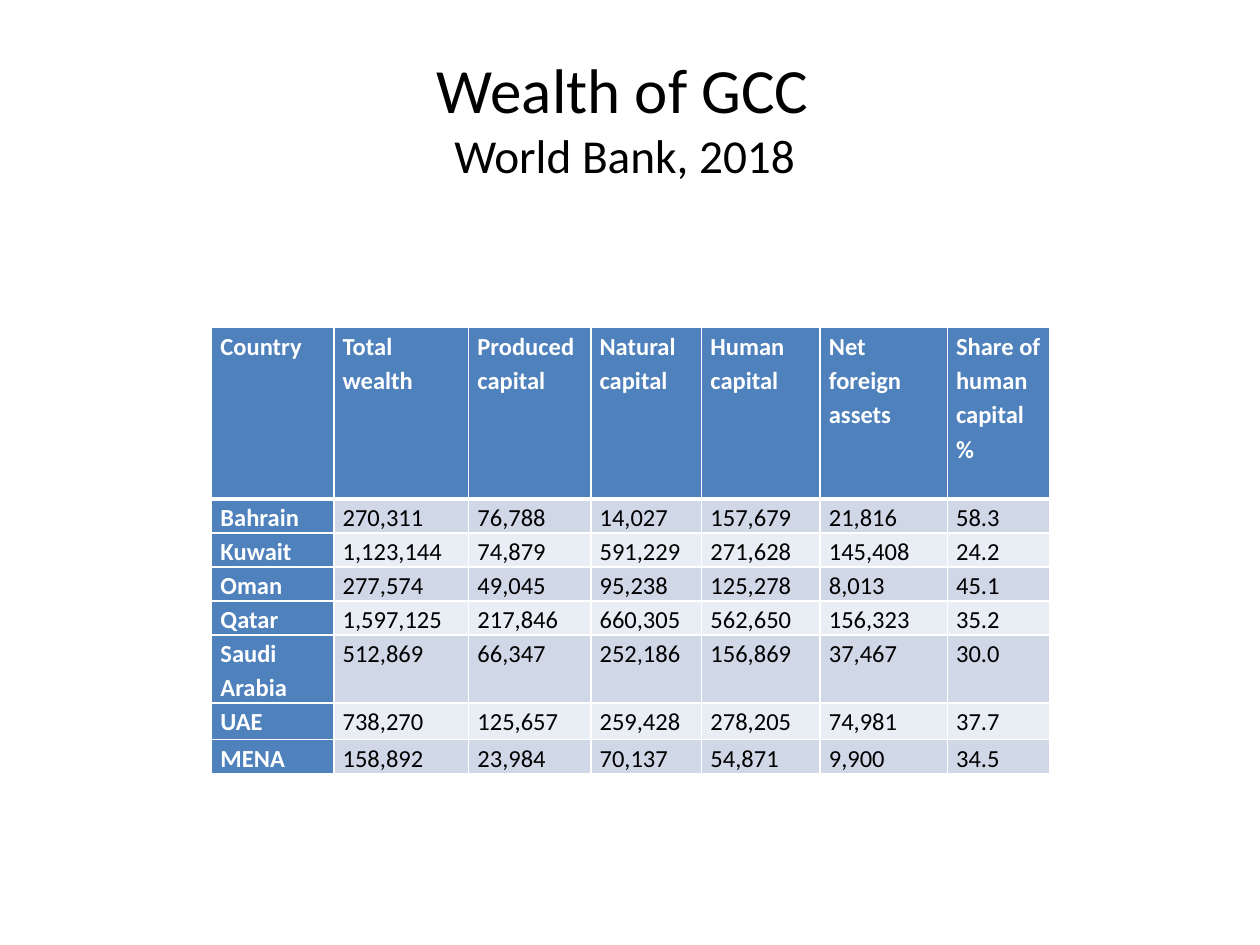
import pptx
import pptx.dml.color
import pptx.enum.text
import pptx.oxml.ns
import pptx.util
from lxml import etree
from pptx.util import Inches

RGBColor = pptx.dml.color.RGBColor
BLACK = RGBColor(0x00, 0x00, 0x00)
WHITE = RGBColor(0xFF, 0xFF, 0xFF)
BLUE = RGBColor(0x4F, 0x81, 0xBD)
BANDS = (RGBColor(0xD0, 0xD8, 0xE8), RGBColor(0xE9, 0xED, 0xF4))

HEAD = ["Country", "Total wealth", "Produced capital", "Natural capital",
        "Human capital", "Net foreign\nassets", "Share of human capital %"]
ROWS = [
    ["Bahrain", "270,311", "76,788", "14,027", "157,679", "21,816", "58.3"],
    ["Kuwait", "1,123,144", "74,879", "591,229", "271,628", "145,408", "24.2"],
    ["Oman", "277,574", "49,045", "95,238", "125,278", "8,013", "45.1"],
    ["Qatar", "1,597,125", "217,846", "660,305", "562,650", "156,323", "35.2"],
    ["Saudi Arabia", "512,869", "66,347", "252,186", "156,869", "37,467", "30.0"],
    ["UAE", "738,270", "125,657", "259,428", "278,205", "74,981", "37.7"],
    ["MENA", "158,892", "23,984", "70,137", "54,871", "9,900", "34.5"],
]
WIDTHS = [0.97, 1.07, 0.97, 0.88, 0.94, 1.01, 0.81]
HEIGHTS = [1.36, 0.27, 0.27, 0.27, 0.27, 0.54, 0.29, 0.27]


class Deck:
    font = "Calibri"
    size = 14

    def __init__(self, slide):
        self.slide = slide

    def run(self, para, text, size, color, bold=False):
        run = para.add_run()
        run.text = text
        run.font.name = self.font
        run.font.size = pptx.util.Pt(size)
        run.font.bold = bold
        run.font.color.rgb = color

    def title(self, left, top, width, height, lines):
        box = self.slide.shapes.add_textbox(
            Inches(left), Inches(top), Inches(width), Inches(height))
        frame = box.text_frame
        frame.word_wrap = True
        frame.vertical_anchor = pptx.enum.text.MSO_ANCHOR.MIDDLE
        para = frame.paragraphs[0]
        para.alignment = pptx.enum.text.PP_ALIGN.CENTER
        for i, (text, size) in enumerate(lines):
            if i:
                para.add_line_break()
            self.run(para, text, size, BLACK)

    def border(self, cell, side, width):
        props = cell._tc.get_or_add_tcPr()
        qn = pptx.oxml.ns.qn
        line = etree.SubElement(props, qn("a:ln" + side), w=str(pptx.util.Pt(width)))
        fill = etree.SubElement(line, qn("a:solidFill"))
        etree.SubElement(fill, qn("a:srgbClr"), val=str(WHITE))

    def cell(self, cell, text, row, col):
        # White rules, thicker below the header
        for side in "LRTB":
            thick = (row, side) in ((0, "B"), (1, "T"))
            self.border(cell, side, 3 if thick else 1)
        label = row == 0 or col == 0
        cell.fill.solid()
        cell.fill.fore_color.rgb = BLUE if label else BANDS[(row - 1) % 2]
        cell.margin_left = cell.margin_right = Inches(0.07)
        cell.margin_top = cell.margin_bottom = 0
        frame = cell.text_frame
        for i, part in enumerate(text.split("\n")):
            para = frame.add_paragraph() if i else frame.paragraphs[0]
            para.line_spacing = 1.15
            self.run(para, part, self.size, WHITE if label else BLACK, label)

    def table(self, left, top, widths, heights, data):
        table = self.slide.shapes.add_table(
            len(heights), len(widths), Inches(left), Inches(top),
            Inches(sum(widths)), Inches(sum(heights))).table
        table.first_col = True
        for col, width in zip(table.columns, widths):
            col.width = Inches(width)
        for row, height in zip(table.rows, heights):
            row.height = Inches(height)
        for r, line in enumerate(data):
            for c, text in enumerate(line):
                self.cell(table.cell(r, c), text, r, c)


def main():
    show = pptx.Presentation()
    show.slide_width, show.slide_height = Inches(10), Inches(7.5)
    deck = Deck(show.slides.add_slide(show.slide_layouts[6]))

    # Heading
    deck.title(0.5, 0.3, 9, 1.25, [("Wealth of GCC ", 36), ("World Bank, 2018 ", 27)])

    # Wealth by country
    deck.table(1.68, 2.6, WIDTHS, HEIGHTS, [HEAD] + ROWS)

    show.save("out.pptx")


if __name__ == "__main__":
    main()
